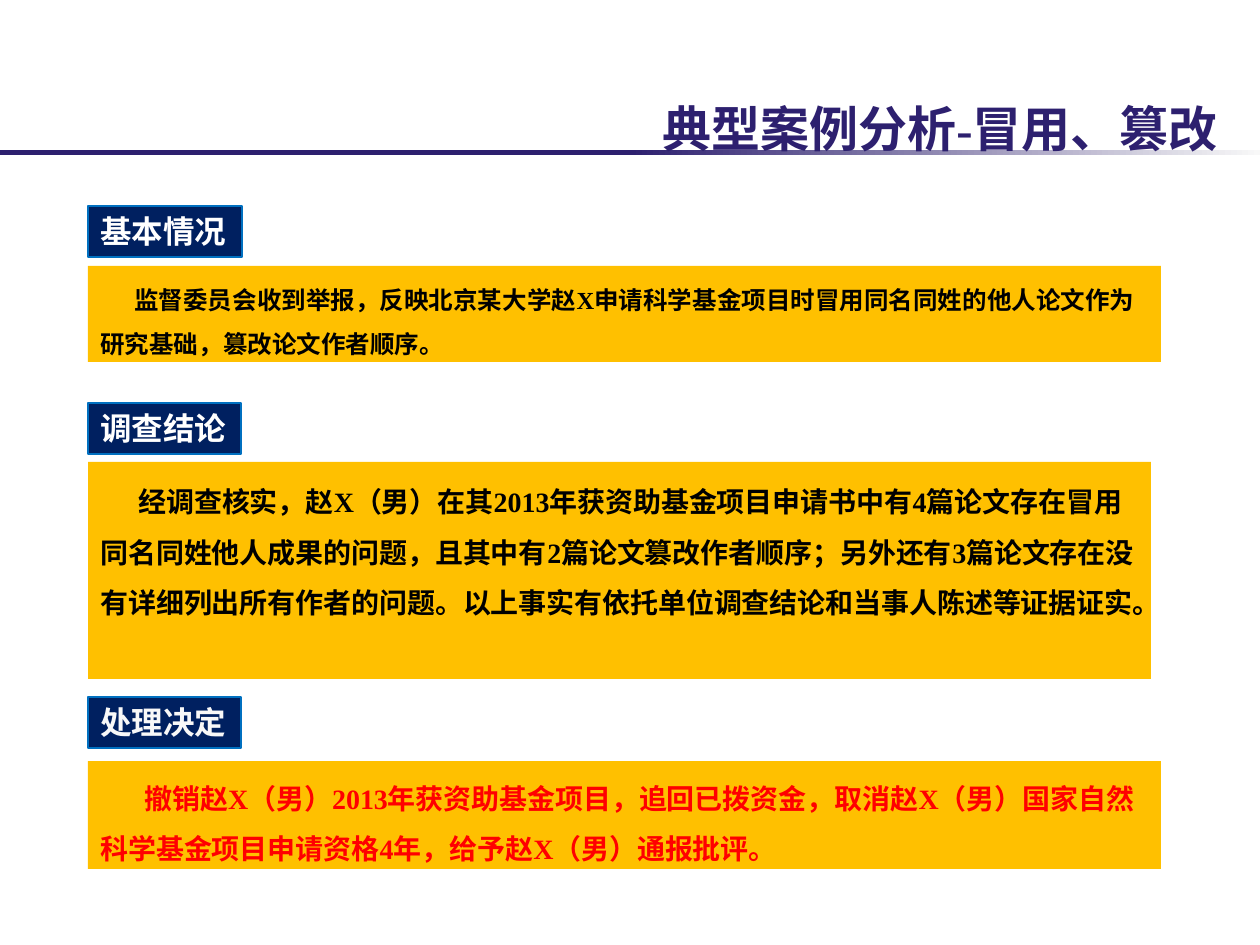
from pptx import Presentation
from pptx.dml.color import RGBColor
from pptx.enum.shapes import MSO_SHAPE
from pptx.enum.text import MSO_ANCHOR, MSO_AUTO_SIZE, PP_ALIGN
from pptx.util import Emu, Pt

COLORS = {
    "purple": "2D206F", "pale": "F8F8F8", "navy": "002060", "blue": "0070C0",
    "amber": "FFC000", "white": "FFFFFF", "black": "000000", "red": "FF0000",
}
FONT = "Times New Roman"
TITLE = "典型案例分析-冒用、篡改"
LEFT = 88
LABEL_HEIGHT = 51

SECTIONS = [
    {"label": "基本情况", "label_top": 206, "label_width": 154, "label_color": "white",
     "body": "监督委员会收到举报，反映北京某大学赵X申请科学基金项目时冒用同名同姓的他人论文作为"
             "研究基础，篡改论文作者顺序。",
     "body_box": (266, 1073, 96), "size": 14, "color": "black",
     "indent": 34, "anchor": MSO_ANCHOR.MIDDLE},
    {"label": "调查结论", "label_top": 403, "label_width": 153, "label_color": "white",
     "body": "经调查核实，赵X（男）在其2013年获资助基金项目申请书中有4篇论文存在冒用同名同姓他人"
             "成果的问题，且其中有2篇论文篡改作者顺序；另外还有3篇论文存在没有详细列出所有作者的"
             "问题。以上事实有依托单位调查结论和当事人陈述等证据证实。",
     "body_box": (462, 1063, 217), "size": 16, "color": "black",
     "indent": 38, "anchor": MSO_ANCHOR.TOP},
    {"label": "处理决定", "label_top": 697, "label_width": 153, "label_color": "pale",
     "body": "撤销赵X（男）2013年获资助基金项目，追回已拨资金，取消赵X（男）国家自然科学基金项目"
             "申请资格4年，给予赵X（男）通报批评。",
     "body_box": (761, 1073, 108), "size": 16, "color": "red",
     "indent": 44, "anchor": MSO_ANCHOR.MIDDLE},
]


def px(length):
    return Emu(round(length * 914400 / 126))


def rgb(name):
    return RGBColor.from_string(COLORS[name])


def add_box(slide, left, top, width, height):
    """Add a plain rectangle without shadow or outline."""
    box = slide.shapes.add_shape(MSO_SHAPE.RECTANGLE, px(left), px(top), px(width), px(height))
    box.shadow.inherit = False
    box.line.fill.background()
    return box


def write(box, text, size, color, anchor, align=PP_ALIGN.LEFT, spacing=1.0):
    frame = box.text_frame
    frame.word_wrap = True
    frame.vertical_anchor = anchor
    paragraph = frame.paragraphs[0]
    paragraph.text = text
    paragraph.alignment = align
    paragraph.line_spacing = spacing
    paragraph.font.name = FONT
    paragraph.font.size = Pt(size)
    paragraph.font.bold = True
    paragraph.font.color.rgb = rgb(color)
    return paragraph


def add_header(slide):
    rule = add_box(slide, 0, 150, 1260, 5)
    rule.fill.gradient()
    rule.fill.gradient_angle = 0
    for stop, (position, color) in zip(rule.fill.gradient_stops, [(0.5, "purple"), (1, "pale")]):
        stop.position = position
        stop.color.rgb = rgb(color)

    title = slide.shapes.add_textbox(px(620), px(88), px(640), px(69))
    write(title, TITLE, 28, "purple", MSO_ANCHOR.BOTTOM, PP_ALIGN.CENTER, 1.1)
    frame = title.text_frame
    frame.margin_left = frame.margin_right = px(8)
    frame.margin_top = frame.margin_bottom = 0


def add_section(slide, section):
    label = add_box(slide, LEFT, section["label_top"], section["label_width"], LABEL_HEIGHT)
    label.fill.solid()
    label.fill.fore_color.rgb = rgb("navy")
    label.line.color.rgb = rgb("blue")
    label.line.width = Pt(0.75)
    write(label, section["label"], 18, section["label_color"], MSO_ANCHOR.TOP)
    label.text_frame.word_wrap = False

    top, width, height = section["body_box"]
    body = add_box(slide, LEFT, top, width, height)
    body.fill.solid()
    body.fill.fore_color.rgb = rgb("amber")
    paragraph = write(body, section["body"], section["size"], section["color"],
                      section["anchor"], spacing=1.5)
    paragraph._p.get_or_add_pPr().set("indent", str(px(section["indent"])))

    for box in (label, body):
        box.text_frame.auto_size = MSO_AUTO_SIZE.SHAPE_TO_FIT_TEXT


def main():
    presentation = Presentation()
    presentation.slide_width = px(1260)
    presentation.slide_height = px(945)
    slide = presentation.slides.add_slide(presentation.slide_layouts[6])
    add_header(slide)
    for section in SECTIONS:
        add_section(slide, section)
    presentation.save("out.pptx")


if __name__ == "__main__":
    main()
